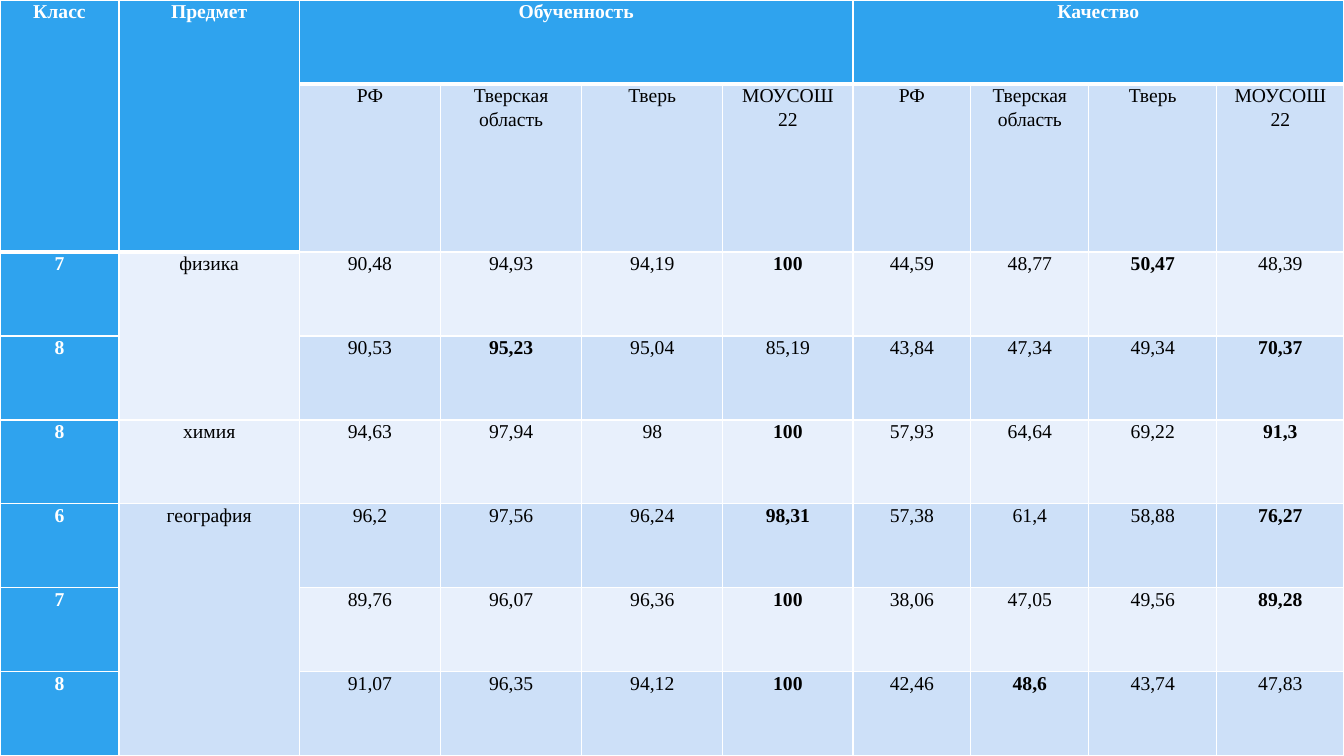
import pptx
import pptx.dml.color
import pptx.enum.text
import pptx.oxml
import pptx.oxml.ns
import pptx.util

Inches, Pt = pptx.util.Inches, pptx.util.Pt

COLORS = {
    "header": "2FA3EE",
    "band": "CDE0F8",
    "light": "E8F0FC",
    "white": "FFFFFF",
    "black": "000000",
    "shade": "B9B9B9",
}
WIDTH, HEIGHT = 13.33, 7.5
COLUMN_WIDTHS = [1.18, 1.79, 1.4, 1.4, 1.4, 1.29, 1.17, 1.17, 1.27, 1.26]
ROW_UNITS = [1, 2, 1, 1, 1, 1, 1, 1]
GROUPS = [slice(2, 6), slice(6, 10)]
REGIONS = ["РФ", "Тверская область", "Тверь", "МОУСОШ\n22"]

HEADER_ROWS = [
    ["Класс", "Предмет", "Обученность", "", "", "", "Качество", "", "", ""],
    ["", ""] + REGIONS * 2,
]
RESULTS = [
    ["7", "физика", "90,48", "94,93", "94,19", "100", "44,59", "48,77", "50,47", "48,39"],
    ["8", "", "90,53", "95,23", "95,04", "85,19", "43,84", "47,34", "49,34", "70,37"],
    ["8", "химия", "94,63", "97,94", "98", "100", "57,93", "64,64", "69,22", "91,3"],
    ["6", "география", "96,2", "97,56", "96,24", "98,31", "57,38", "61,4", "58,88", "76,27"],
    ["7", "", "89,76", "96,07", "96,36", "100", "38,06", "47,05", "49,56", "89,28"],
    ["8", "", "91,07", "96,35", "94,12", "100", "42,46", "48,6", "43,74", "47,83"],
]
# First and last cell of each merged area, as (row, column)
MERGES = [
    ((0, 0), (1, 0)),
    ((0, 1), (1, 1)),
    ((0, 2), (0, 5)),
    ((0, 6), (0, 9)),
    ((2, 1), (3, 1)),
    ((5, 1), (7, 1)),
]


def number(text):
    return float(text.replace(",", "."))


def best_columns(row):
    """Columns holding the highest value of each group of regions."""
    return {max(range(len(row))[group], key=lambda c: number(row[c])) for group in GROUPS}


class SlideBuilder:
    def __init__(self, s, font="Times New Roman", size=14):
        self.s, self.font, self.size = s, font, size

    def color(self, name):
        return pptx.dml.color.RGBColor.from_string(COLORS[name])

    def background(self, top, bottom):
        fill = self.s.background.fill
        fill.gradient()
        fill.gradient_angle = 270
        for stop, name, position in zip(fill.gradient_stops, (top, bottom), (0, 1)):
            stop.color.rgb = self.color(name)
            stop.position = position

    def table(self, widths, heights):
        sp = self.s.shapes.add_table(
            len(heights), len(widths), 0, 0, Inches(sum(widths)), Inches(sum(heights)))
        for column, width in zip(sp.table.columns, widths):
            column.width = Inches(width)
        for row, height in zip(sp.table.rows, heights):
            row.height = Inches(height)
        return sp.table

    def borders(self, cell, bottom):
        tcPr = cell._tc.get_or_add_tcPr()
        for side, points in zip("LRTB", (1, 1, 1, bottom)):
            tcPr.append(pptx.oxml.parse_xml(
                f'<a:ln{side} {pptx.oxml.ns.nsdecls("a")} w="{Pt(points)}"><a:solidFill>'
                f'<a:srgbClr val="{COLORS["white"]}"/></a:solidFill></a:ln{side}>'))

    def cell(self, cell, text, fill, color, bold, bottom):
        self.borders(cell, bottom)
        cell.fill.solid()
        cell.fill.fore_color.rgb = self.color(fill)
        cell.margin_left = cell.margin_right = Inches(0.04)
        cell.margin_top = cell.margin_bottom = 0
        cell.text_frame.text = text
        for p in cell.text_frame.paragraphs:
            p.alignment = pptx.enum.text.PP_ALIGN.CENTER
            p.line_spacing = 1.07
            p.font.size = Pt(self.size)
            for r in p.runs:
                r.font.name = self.font
                r.font.size = Pt(self.size)
                r.font.bold = bold
                r.font.color.rgb = self.color(color)


def main():
    prs = pptx.Presentation()
    prs.slide_width, prs.slide_height = Inches(WIDTH), Inches(HEIGHT)
    builder = SlideBuilder(prs.slides.add_slide(prs.slide_layouts[6]))
    builder.background("white", "shade")

    unit = HEIGHT / sum(ROW_UNITS)
    table = builder.table(COLUMN_WIDTHS, [unit * n for n in ROW_UNITS])
    for first, last in MERGES:
        table.cell(*first).merge(table.cell(*last))

    for i, row in enumerate(HEADER_ROWS + RESULTS):
        best = best_columns(row) if i >= len(HEADER_ROWS) else set()
        for j, text in enumerate(row):
            top_header = i == 0 or (i == 1 and j < 2)
            header = top_header or j == 0
            fill = "header" if header else "band" if i % 2 else "light"
            builder.cell(table.cell(i, j), text, fill,
                         color="white" if header else "black",
                         bold=header or j in best,
                         bottom=3 if top_header else 1)
    prs.save("out.pptx")


if __name__ == "__main__":
    main()
